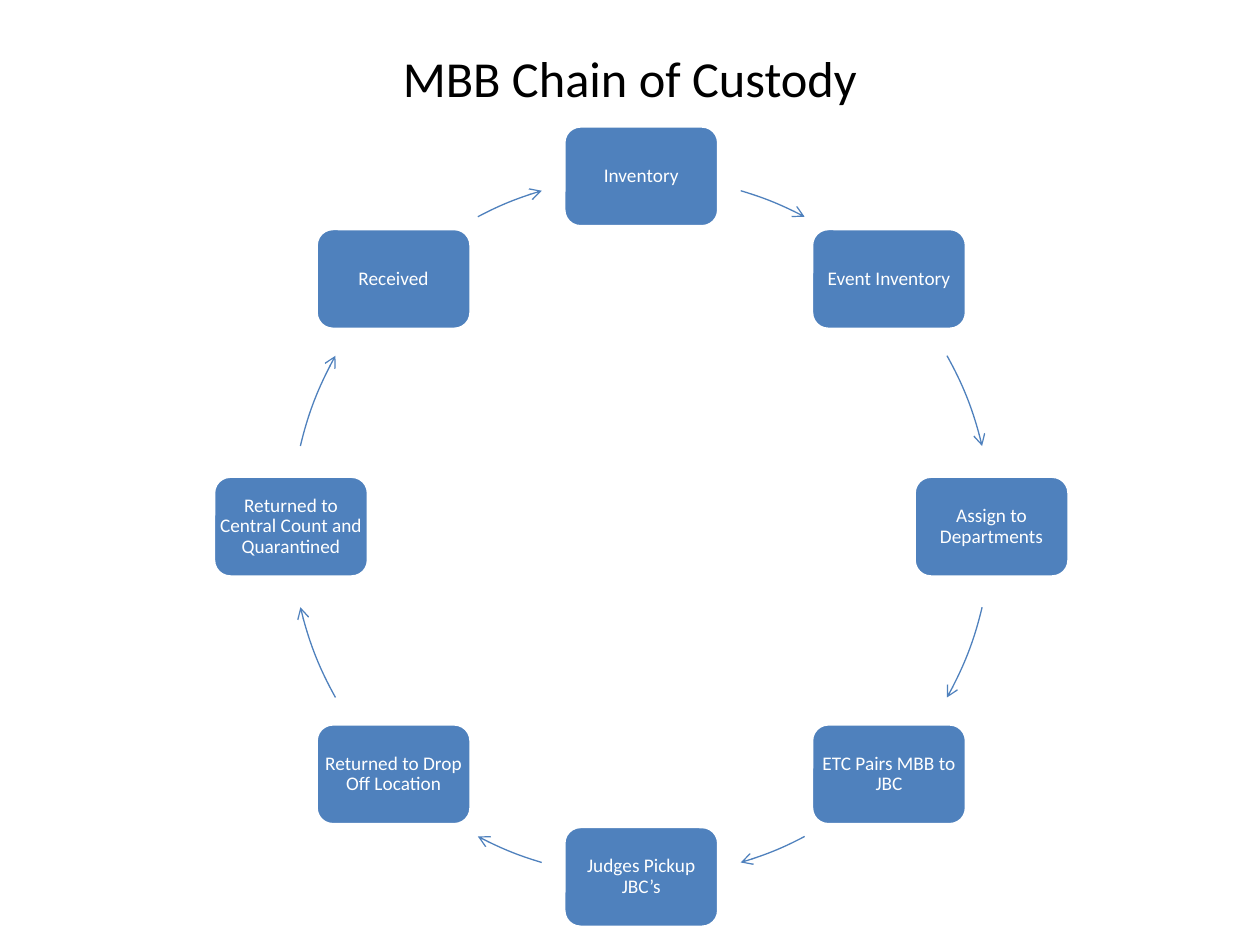
from math import cos, radians, sin

from lxml.etree import SubElement
from pptx import Presentation
from pptx.dml.color import RGBColor
from pptx.enum.shapes import MSO_SHAPE as Preset
from pptx.enum.text import MSO_ANCHOR as Anchor, PP_ALIGN as Align
from pptx.oxml.ns import qn
from pptx.util import Inches, Pt

BLUE = RGBColor(0x4F, 0x81, 0xBD)
WHITE = RGBColor(0xFF, 0xFF, 0xFF)
BLACK = RGBColor(0x00, 0x00, 0x00)

STEPS = [
    "Inventory", "Event Inventory", "Assign to Departments",
    "ETC Pairs MBB to JBC", "Judges Pickup JBC’s",
    "Returned to Drop Off Location",
    "Returned to Central Count and Quarantined", "Received",
]
NODE_WIDTH, NODE_HEIGHT = 1.23, 0.8
# Arrow spans in the first quadrant, in degrees clockwise from the top
FIRST_ARROW, SECOND_ARROW = (16.5, 27.8), (60.8, 76.7)


def write_text(shape, text, size, color, margin):
    frame = shape.text_frame
    frame.word_wrap = True
    frame.vertical_anchor = Anchor.MIDDLE
    frame.margin_left = frame.margin_right = Inches(margin)
    frame.margin_top = frame.margin_bottom = Inches(margin)
    paragraph = frame.paragraphs[0]
    paragraph.text = text
    paragraph.alignment = Align.CENTER
    paragraph.font.name = "Calibri"
    paragraph.font.size = Pt(size)
    paragraph.font.color.rgb = color
    return paragraph


def add_title(slide, left, top, width, height):
    box = slide.shapes.add_textbox(
        Inches(left), Inches(top), Inches(width), Inches(height))
    write_text(box, "MBB Chain of Custody", 28.8, BLACK, 0.05)


def add_node(slide, center_x, center_y, text):
    node = slide.shapes.add_shape(
        Preset.ROUNDED_RECTANGLE,
        Inches(center_x - NODE_WIDTH / 2), Inches(center_y - NODE_HEIGHT / 2),
        Inches(NODE_WIDTH), Inches(NODE_HEIGHT))
    node.shadow.inherit = False
    node.fill.solid()
    node.fill.fore_color.rgb = BLUE
    node.line.color.rgb = WHITE
    node.line.width = Pt(2)
    write_text(node, text, 11, WHITE, 0.01).line_spacing = 0.9


def add_arc_arrow(slide, left, top, size, start, end):
    arc = slide.shapes.add_shape(
        Preset.ARC, Inches(left), Inches(top), Inches(size), Inches(size))
    arc.shadow.inherit = False
    arc.fill.background()
    arc.line.color.rgb = BLUE
    arc.line.width = Pt(0.75)
    # Arc angles count from the right, in units of 1/0.6 degree
    for index, angle in enumerate((start, end)):
        arc.adjustments[index] = (angle - 90) % 360 * 0.6
    SubElement(arc.line._get_or_add_ln(), qn("a:tailEnd"), type="arrow")


def arrow_spans():
    """Mirror the two quadrant spans to give all eight, clockwise."""
    quadrant = [FIRST_ARROW, SECOND_ARROW]
    half = quadrant + [(180 - end, 180 - start)
                       for start, end in reversed(quadrant)]
    return half + [(start + 180, end + 180) for start, end in half]


def add_cycle(slide, left, top, size):
    radius = size / 2
    for index, (text, span) in enumerate(zip(STEPS, arrow_spans())):
        angle = radians(index * 360 / len(STEPS))
        add_node(slide, left + radius + radius * sin(angle),
                 top + radius - radius * cos(angle), text)
        add_arc_arrow(slide, left, top, size, *span)


def main():
    presentation = Presentation()
    presentation.slide_width = Inches(10)
    presentation.slide_height = Inches(7.5)
    slide = presentation.slides.add_slide(presentation.slide_layouts[6])
    add_title(slide, 0.5, 0.3, 9, 0.62)
    add_cycle(slide, 2.31, 1.4, 5.56)
    presentation.save("out.pptx")


if __name__ == "__main__":
    main()
